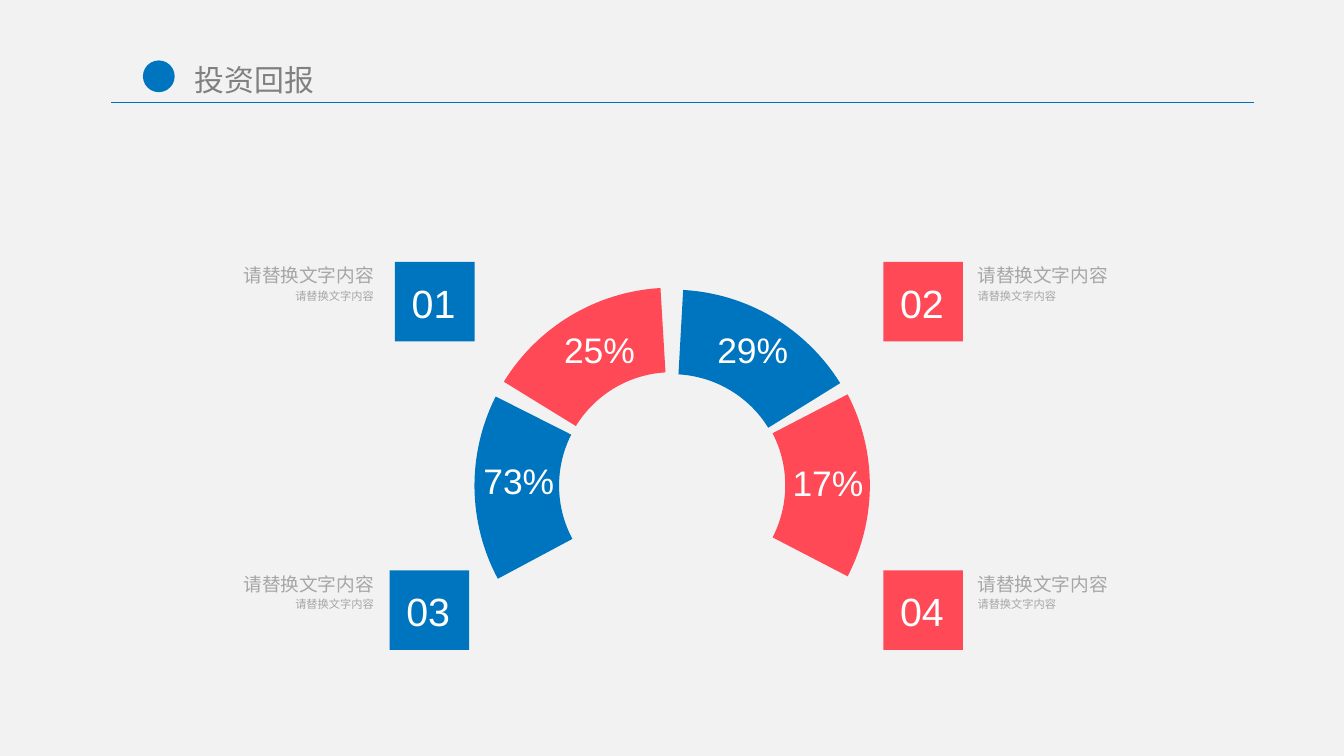
from math import cos, radians, sin, tan

from lxml import etree
from pptx import Presentation
from pptx.dml.color import RGBColor
from pptx.enum.shapes import MSO_CONNECTOR, MSO_SHAPE
from pptx.enum.text import MSO_ANCHOR, MSO_AUTO_SIZE, PP_ALIGN
from pptx.oxml.ns import qn
from pptx.util import Pt

LEFT, CENTER, RIGHT = PP_ALIGN.LEFT, PP_ALIGN.CENTER, PP_ALIGN.RIGHT
TOP, MIDDLE, BOTTOM = MSO_ANCHOR.TOP, MSO_ANCHOR.MIDDLE, MSO_ANCHOR.BOTTOM
ELLIPSE, ROUNDED = MSO_SHAPE.OVAL, MSO_SHAPE.ROUNDED_RECTANGLE
STRAIGHT = MSO_CONNECTOR.STRAIGHT
NO_FIT = MSO_AUTO_SIZE.NONE

COLORS = {
    "background": "F2F2F2",
    "blue": "0075BF",
    "red": "FF4957",
    "rule": "0072BB",
    "title": "808080",
    "caption": "A6A6A6",
    "white": "FFFFFF",
}
TILE = 42.6
PLACEHOLDER = "请替换文字内容"


def rgb(name):
    """Return the named colour."""
    return RGBColor.from_string(COLORS[name])


def paint(shape, color):
    """Give a shape a flat fill with no line or shadow."""
    shape.fill.solid()
    shape.fill.fore_color.rgb = rgb(color)
    shape.line.fill.background()
    shape.shadow.inherit = False


def write(shape, text, size, color, align=LEFT, anchor=TOP,
          font="Arial", spacing=1.2, margins=(0, 0)):
    """Put one line of styled text in a shape."""
    frame = shape.text_frame
    side, edge = map(Pt, margins)
    frame_format = {
        "word_wrap": True, "auto_size": NO_FIT, "vertical_anchor": anchor,
        "margin_left": side, "margin_right": side,
        "margin_top": edge, "margin_bottom": edge,
    }
    para = frame.paragraphs[0]
    span = para.add_run()
    span.text = text
    span.font.color.rgb = rgb(color)
    for target, values in (
        (frame, frame_format),
        (para, {"alignment": align, "line_spacing": spacing}),
        (span.font, {"name": font, "size": Pt(size)}),
    ):
        for name, value in values.items():
            setattr(target, name, value)


def add_text(page, box, *content, **style):
    """Place a text box with one line of styled text."""
    write(page.shapes.add_textbox(*map(Pt, box)), *content, **style)


def add_outline(page, points):
    """Build a closed outline through points given in points of length."""
    corners = [(Pt(x), Pt(y)) for x, y in points]
    builder = page.shapes.build_freeform(*corners[0])
    builder.add_line_segments(corners[1:], close=True)
    return builder.convert_to_shape()


def add_header(page, box, title):
    """Place the dot, the title and the rule below them."""
    left, top, width, height = box
    add_text(page, (left + 39.8, top, 141, 24.5), title, 16, "title",
             font="Noto Sans CJK SC", spacing=1.0, margins=(5, 2.9))
    bottom = top + height
    rule = page.shapes.add_connector(
        STRAIGHT, Pt(left), Pt(bottom), Pt(left + width), Pt(bottom))
    rule.line.color.rgb = rgb("rule")
    rule.line.width = Pt(0.75)
    etree.SubElement(rule._element.spPr, qn("a:effectLst"))
    dot = page.shapes.add_shape(
        ELLIPSE, Pt(left + 17), Pt(top + 2.2), Pt(17), Pt(17))
    paint(dot, "blue")


def arc_points(center, radius, start, end):
    """Return the end points and handles of an arc of two cubic curves."""
    half = radians(end - start) / 2
    reach = 4 / 3 * tan(half / 4) * radius

    def place(angle, shift=0):
        """Return a point on the circle, shifted along its tangent."""
        return (center[0] + radius * sin(angle) + shift * cos(angle),
                center[1] - radius * cos(angle) + shift * sin(angle))

    first = radians(start)
    points = [place(first)]
    for angle in (first, first + half):
        points += [place(angle, reach), place(angle + half, -reach),
                   place(angle + half)]
    return points


def add_segment(page, center, radii, angles, color):
    """Draw a ring segment between two clockwise angles from the top."""
    start, end = angles
    outer = arc_points(center, radii[0], start, end)
    inner = arc_points(center, radii[1], end, start)
    shape = add_outline(page, outer + inner)
    lines = list(shape._element.iter(qn("a:lnTo")))
    for first in (0, 3, 7, 10):
        curve = etree.Element(qn("a:cubicBezTo"))
        lines[first].addprevious(curve)
        for line in lines[first:first + 3]:
            curve.append(line[0])
            line.getparent().remove(line)
    paint(shape, color)


def add_label(page, box, text):
    """Place a percentage in an unfilled outline."""
    left, top, width, height = box
    right, bottom = left + width, top + height
    shape = add_outline(
        page, [(left, top), (right, top), (right, bottom), (left, bottom)])
    shape.fill.background()
    shape.line.fill.background()
    shape.shadow.inherit = False
    write(shape, text, 19, "white", CENTER, BOTTOM)


def add_ring(page, box):
    """Draw the open ring of four segments with their percentages."""
    left, top, size = box
    radius = size / 2
    segments = [
        ((-58.4, -3.4), "red", 0),
        ((62.6, 117.4), "red", 0),
        ((3.2, 58.2), "blue", 1.1),
        ((-118.1, -63.2), "blue", 0.2),
    ]
    labels = [("25%", 43.2, 26.6), ("29%", 125.3, 26.6),
              ("17%", 165.6, 97.9), ("73%", 0, 96.5)]
    for angles, color, drop in segments:
        center = (left + radius, top + radius + drop)
        add_segment(page, center, (radius, 60.6), angles, color)
    for text, across, down in labels:
        add_label(page, (left + across, top + down, 47.5, 18), text)


def add_callout(page, box, number, color, text_width, mirrored):
    """Place a numbered tile with a heading and a caption beside it."""
    left, top, width = box
    if mirrored:
        tile_left, text_left, align = left + width - TILE, left, RIGHT
    else:
        tile_left, align = left, LEFT
        text_left = left + width - text_width
    heading_width = 76.3 if mirrored else 78.5
    heading_left = text_left + (text_width - heading_width) * mirrored
    add_text(page, (heading_left, top, heading_width, 20.2), PLACEHOLDER, 10,
             "caption", align, MIDDLE, margins=(0, 5.8))
    add_text(page, (text_left, top + 17.3, text_width, 34.5), PLACEHOLDER, 6,
             "caption", align)
    tile = page.shapes.add_shape(
        ROUNDED, Pt(tile_left), Pt(top + 4.2), Pt(TILE), Pt(TILE))
    tile.adjustments[0] = 0
    paint(tile, color)
    add_text(page, (tile_left + 3.4, top + 9.5, 34.6, 28), number, 21.1,
             "white", CENTER, MIDDLE, margins=(0, 5.8))


def main():
    """Build the slide and save the deck."""
    deck = Presentation()
    deck.slide_width, deck.slide_height = Pt(720), Pt(405)
    page = deck.slides.add_slide(deck.slide_layouts[6])
    page.background.fill.solid()
    page.background.fill.fore_color.rgb = rgb("background")
    add_header(page, (59.6, 30.2, 612.2, 24.8), "投资回报")
    add_ring(page, (254.2, 154.1, 211.8))
    callouts = [
        ("01", (79.2, 136.1, 175), "blue", 121, True),
        ("02", (473.2, 136.1, 165), "red", 114.5, False),
        ("03", (79.2, 301.4, 172.1), "blue", 121, True),
        ("04", (473.2, 301.4, 165), "red", 114.5, False),
    ]
    for number, box, color, text_width, mirrored in callouts:
        add_callout(page, box, number, color, text_width, mirrored)
    deck.save("out.pptx")


if __name__ == "__main__":
    main()
